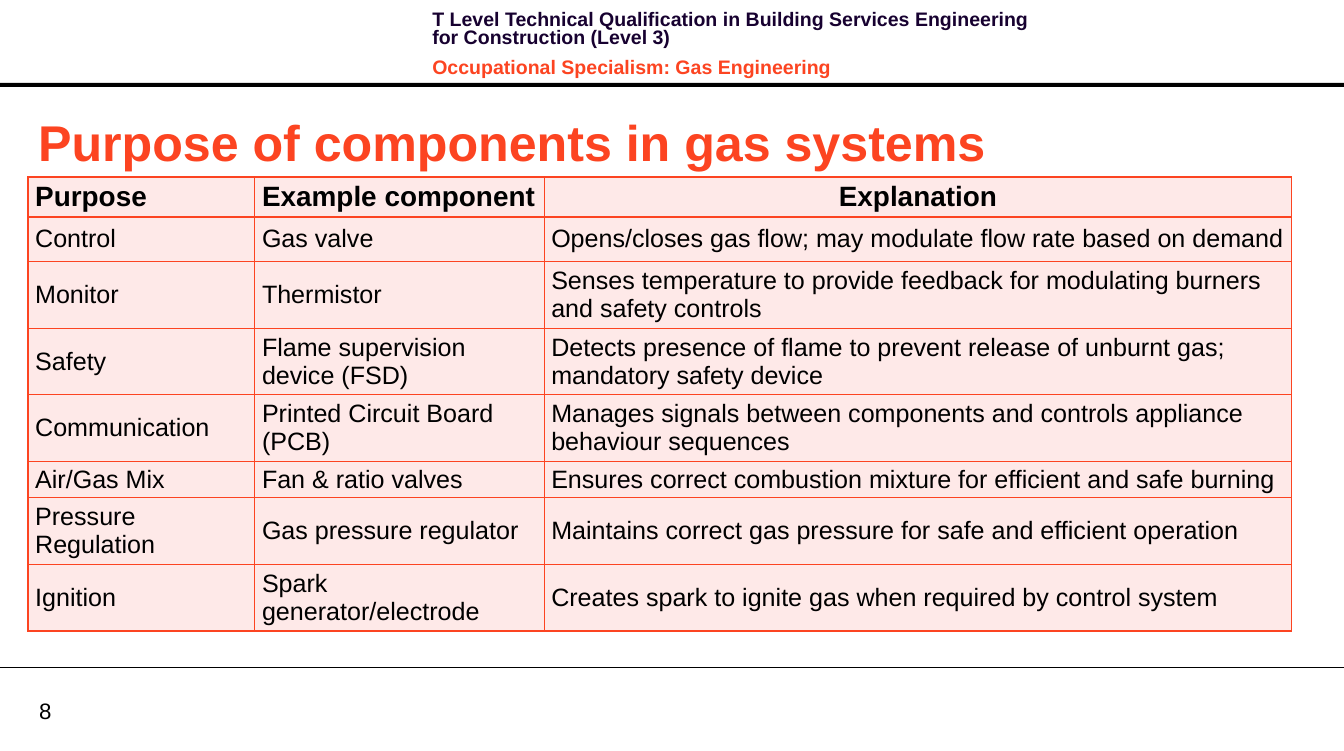
from lxml.etree import SubElement
from pptx import Presentation
from pptx.dml.color import RGBColor
from pptx.enum.shapes import MSO_CONNECTOR, MSO_SHAPE
from pptx.enum.text import MSO_ANCHOR, MSO_AUTO_SIZE, PP_ALIGN
from pptx.oxml.ns import qn
from pptx.util import Cm, Pt

BLACK = RGBColor(0x00, 0x00, 0x00)
NAVY = RGBColor(0x17, 0x01, 0x30)
ORANGE = RGBColor(0xFC, 0x44, 0x21)
PINK = RGBColor(0xFE, 0xE9, 0xE8)

SLIDE_WIDTH, SLIDE_HEIGHT = Cm(34.01), Cm(19)
COLUMN_WIDTHS = (5.74, 7.32, 18.92)
ROW_HEIGHTS = (0.95, 1.13, 1.6, 1.6, 1.6, 0.89, 1.6, 1.6)
COMPONENTS = (
    ("Purpose", "Example component", "Explanation"),
    ("Control", "Gas valve",
     "Opens/closes gas flow; may modulate flow rate based on demand"),
    ("Monitor", "Thermistor",
     "Senses temperature to provide feedback for modulating burners and safety controls"),
    ("Safety", "Flame supervision device (FSD)",
     "Detects presence of flame to prevent release of unburnt gas; mandatory safety device"),
    ("Communication", "Printed Circuit Board (PCB)",
     "Manages signals between components and controls appliance behaviour sequences"),
    ("Air/Gas Mix", "Fan & ratio valves",
     "Ensures correct combustion mixture for efficient and safe burning"),
    ("Pressure Regulation", "Gas pressure regulator",
     "Maintains correct gas pressure for safe and efficient operation"),
    ("Ignition", "Spark generator/electrode",
     "Creates spark to ignite gas when required by control system"),
)


def format_paragraph(paragraph, size, color, bold=False):
    font = paragraph.font
    font.name = "Arial"
    font.size = Pt(size)
    font.bold = bold
    font.color.rgb = color


def add_header_bar(slide):
    bar = slide.shapes.add_shape(
        MSO_SHAPE.RECTANGLE, 0, Cm(2.1), SLIDE_WIDTH, Cm(0.1))
    bar.shadow.inherit = False
    bar.fill.solid()
    bar.fill.fore_color.rgb = BLACK
    bar.line.fill.background()


def add_header_text(slide):
    box = slide.shapes.add_textbox(Cm(10.69), Cm(0.18), Cm(16.18), Cm(1.63))
    frame = box.text_frame
    frame.word_wrap = True
    lines = (
        ("T Level Technical Qualification in Building Services Engineering"
         " for Construction (Level 3)", NAVY),
        ("Occupational Specialism: Gas Engineering", ORANGE),
    )
    for index, (text, color) in enumerate(lines):
        paragraph = frame.add_paragraph() if index else frame.paragraphs[0]
        paragraph.text = text
        paragraph.line_spacing = Pt(13.1)
        paragraph.space_before = Pt(4 if index else 0)
        paragraph.space_after = Pt(4)
        format_paragraph(paragraph, 14, color, bold=True)


def add_footer(slide):
    rule = slide.shapes.add_connector(
        MSO_CONNECTOR.STRAIGHT, 0, Cm(16.89), SLIDE_WIDTH, Cm(16.89))
    rule.line.color.rgb = BLACK
    rule.line.width = Pt(0.75)
    SubElement(rule._element.spPr, qn("a:effectLst"))

    box = slide.shapes.add_textbox(Cm(0.99), Cm(17.63), Cm(1.63), Cm(0.69))
    frame = box.text_frame
    frame.word_wrap = True
    frame.vertical_anchor = MSO_ANCHOR.MIDDLE
    frame.margin_left = frame.margin_right = 0
    frame.margin_top = frame.margin_bottom = 0
    frame.text = "8"
    format_paragraph(frame.paragraphs[0], 16, BLACK)


def set_title(slide):
    title = slide.shapes.title
    title.left, title.top = Cm(0.71), Cm(2.69)
    title.width, title.height = Cm(32.31), Cm(1.8)
    frame = title.text_frame
    frame.text = "Purpose of components in gas systems"
    frame.auto_size = MSO_AUTO_SIZE.NONE
    frame.vertical_anchor = MSO_ANCHOR.MIDDLE
    paragraph = frame.paragraphs[0]
    paragraph.alignment = PP_ALIGN.LEFT
    format_paragraph(paragraph, 36, ORANGE, bold=True)


def add_cell_borders(cell):
    properties = cell._tc.get_or_add_tcPr()
    for side in ("a:lnL", "a:lnR", "a:lnT", "a:lnB"):
        border = SubElement(properties, qn(side), w=str(Pt(1)))
        fill = SubElement(border, qn("a:solidFill"))
        SubElement(fill, qn("a:srgbClr"), val=str(ORANGE))


def format_cell(cell, text, is_heading):
    cell.text = text
    cell.vertical_anchor = MSO_ANCHOR.MIDDLE
    cell.margin_left = cell.margin_right = Cm(0.18)
    cell.margin_top = cell.margin_bottom = Cm(0.08)
    add_cell_borders(cell)
    cell.fill.solid()
    cell.fill.fore_color.rgb = PINK
    format_paragraph(cell.text_frame.paragraphs[0],
                     20 if is_heading else 18, BLACK, bold=is_heading)


def add_component_table(slide):
    table = slide.shapes.add_table(
        len(COMPONENTS), len(COLUMN_WIDTHS), Cm(0.71), Cm(4.48),
        Cm(sum(COLUMN_WIDTHS)), Cm(sum(ROW_HEIGHTS))).table
    table.horz_banding = False
    for column, width in zip(table.columns, COLUMN_WIDTHS):
        column.width = Cm(width)
    for row_index, (row, texts) in enumerate(zip(table.rows, COMPONENTS)):
        row.height = Cm(ROW_HEIGHTS[row_index])
        for cell, text in zip(row.cells, texts):
            format_cell(cell, text, is_heading=row_index == 0)
    table.cell(0, 2).text_frame.paragraphs[0].alignment = PP_ALIGN.CENTER


def main():
    presentation = Presentation()
    presentation.slide_width = SLIDE_WIDTH
    presentation.slide_height = SLIDE_HEIGHT
    slide = presentation.slides.add_slide(presentation.slide_layouts[5])
    add_header_bar(slide)
    add_footer(slide)
    add_header_text(slide)
    set_title(slide)
    add_component_table(slide)
    presentation.save("out.pptx")


if __name__ == "__main__":
    main()
